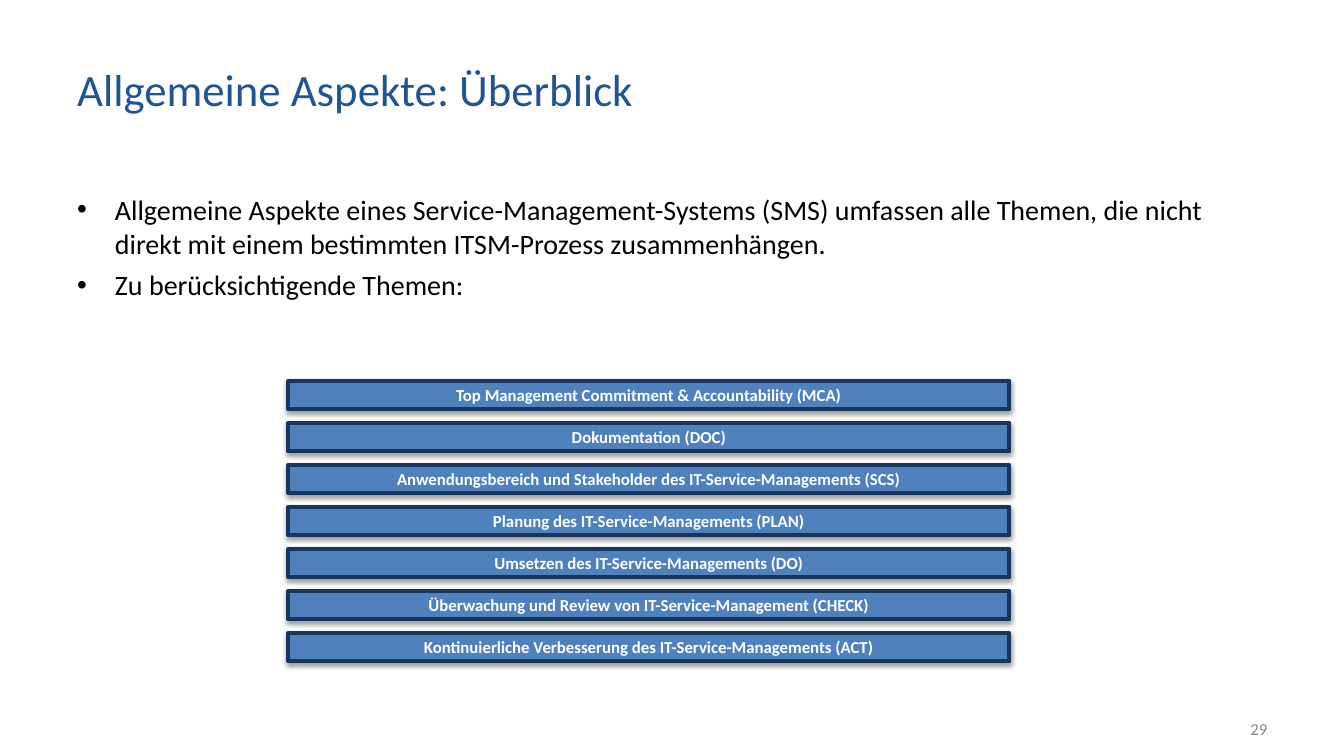
from lxml import etree
from pptx import Presentation
from pptx.dml.color import RGBColor
from pptx.enum.shapes import MSO_SHAPE
from pptx.enum.text import MSO_ANCHOR, PP_ALIGN
from pptx.oxml.ns import qn
from pptx.util import Pt

RECTANGLE = MSO_SHAPE.RECTANGLE
TOP, MIDDLE = MSO_ANCHOR.TOP, MSO_ANCHOR.MIDDLE
LEFT, CENTER, RIGHT = PP_ALIGN.LEFT, PP_ALIGN.CENTER, PP_ALIGN.RIGHT

COLORS = {
    "title": "205595",
    "body": "000000",
    "number": "888888",
    "bar": "4F81BD",
    "bar_line": "17365D",
    "bar_text": "FFFFFF",
    "shadow": "000000",
}
FORMATS = {
    "title": {"size": Pt(32), "bold": False},
    "body": {"size": Pt(20), "bold": False},
    "number": {"size": Pt(12), "bold": False},
    "bar_text": {"size": Pt(12), "bold": True},
}
BULLETS = [
    "Allgemeine Aspekte eines Service-Management-Systems (SMS) umfassen alle Themen, "
    "die nicht direkt mit einem bestimmten ITSM-Prozess zusammenhängen.",
    "Zu berücksichtigende Themen:",
]
TOPICS = [
    "Top Management Commitment & Accountability (MCA)",
    "Dokumentation (DOC)",
    "Anwendungsbereich und Stakeholder des IT-Service-Managements (SCS)",
    "Planung des IT-Service-Managements (PLAN)",
    "Umsetzen des IT-Service-Managements (DO)",
    "Überwachung und Review von IT-Service-Management (CHECK)",
    "Kontinuierliche Verbesserung des IT-Service-Managements (ACT)",
]
BAR_LEFT, BAR_TOP, BAR_WIDTH, BAR_HEIGHT, BAR_PITCH = 206, 272.2, 515, 20.2, 30


def write_text(shape, lines, role, anchor, alignment, bullet=False):
    """Fill a shape with one paragraph per line in the format of its role."""
    frame = shape.text_frame
    frame.word_wrap = True
    frame.vertical_anchor = anchor
    frame.text = "\n".join(lines)
    for index, paragraph in enumerate(frame.paragraphs):
        paragraph.alignment = alignment
        if index:
            paragraph.space_before = Pt(5.6)
        if bullet:
            properties = paragraph._p.get_or_add_pPr()
            properties.set("marL", str(Pt(27)))
            properties.set("indent", str(Pt(-27)))
            etree.SubElement(properties, qn("a:buFont"), typeface="Arial")
            etree.SubElement(properties, qn("a:buChar"), char="•")
        font = paragraph.runs[0].font
        font.name = "Calibri"
        font.color.rgb = RGBColor.from_string(COLORS[role])
        for name, value in FORMATS[role].items():
            setattr(font, name, value)


def add_soft_shadow(shape):
    shape.shadow.inherit = False
    effects = shape._element.spPr.find(qn("a:effectLst"))
    shadow = etree.SubElement(
        effects, qn("a:outerShdw"), blurRad=str(Pt(3.1)), dist=str(Pt(1.6)),
        dir="5400000", rotWithShape="0")
    color = etree.SubElement(shadow, qn("a:srgbClr"), val=COLORS["shadow"])
    etree.SubElement(color, qn("a:alpha"), val="38000")


presentation = Presentation()
presentation.slide_width, presentation.slide_height = Pt(960), Pt(540)
slide = presentation.slides.add_slide(presentation.slide_layouts[6])

title = slide.shapes.add_textbox(Pt(48), Pt(21.6), Pt(713.5), Pt(82.8))
write_text(title, ["Allgemeine Aspekte: Überblick"], "title", MIDDLE, LEFT)

body = slide.shapes.add_textbox(Pt(48), Pt(134), Pt(864), Pt(108.7))
write_text(body, BULLETS, "body", TOP, LEFT, bullet=True)

slide_number = slide.shapes.add_textbox(Pt(688.3), Pt(506.2), Pt(224), Pt(28.8))
write_text(slide_number, ["29"], "number", MIDDLE, RIGHT)

for row, topic in enumerate(TOPICS):
    bar = slide.shapes.add_shape(
        RECTANGLE, Pt(BAR_LEFT), Pt(BAR_TOP + row * BAR_PITCH), Pt(BAR_WIDTH), Pt(BAR_HEIGHT))
    bar.fill.solid()
    bar.fill.fore_color.rgb = RGBColor.from_string(COLORS["bar"])
    bar.line.color.rgb = RGBColor.from_string(COLORS["bar_line"])
    bar.line.width = Pt(3)
    add_soft_shadow(bar)
    write_text(bar, [topic], "bar_text", MIDDLE, CENTER)

presentation.save("out.pptx")
